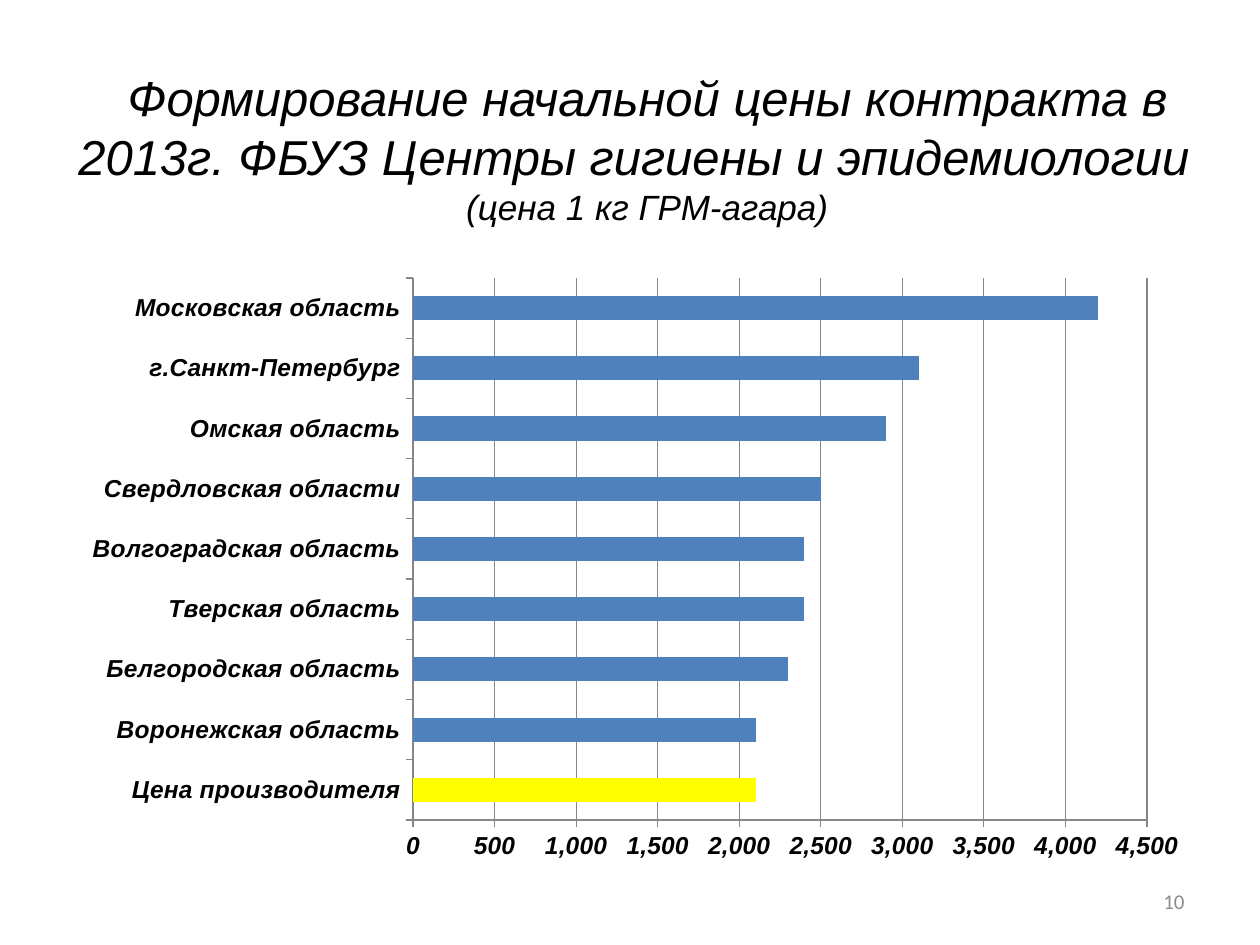
from dataclasses import dataclass

from pptx import Presentation
from pptx import util as u
from pptx.chart.data import CategoryChartData
from pptx.dml.color import RGBColor
from pptx.enum import chart as ch, text


@dataclass(frozen=True)
class Theme:
    heading: str = "Arial"
    body: str = "Calibri"
    ink: str = "000000"
    muted: str = "8C8C8C"
    grid: str = "868686"
    bar: str = "4F81BD"
    accent: str = "FFFF00"
    title: int = 28
    subtitle: int = 20
    label: int = 14
    number: int = 12
    chart: int = 10


THEME = Theme()
PRICES = [
    ("Цена производителя", 2100),
    (" Воронежская область", 2100),
    (" Белгородская область", 2300),
    ("Тверская область", 2400),
    (" Волгоградская область", 2400),
    (" Свердловская области", 2500),
    (" Омская область", 2900),
    (" г.Санкт-Петербург", 3100),
    ("Московская область", 4200),
]


def color(value):
    return RGBColor.from_string(value)


def set_font(font, size, name=THEME.heading, ink=THEME.ink, bold=False, italic=False):
    font.size = u.Pt(size)
    font.name = name
    font.color.rgb = color(ink)
    font.bold = bold
    font.italic = italic


def add_run(p, content, **style):
    r = p.add_run()
    r.text = content
    set_font(r.font, **style)


def add_text(s, box, content, align=text.PP_ALIGN.CENTER, **style):
    tf = s.shapes.add_textbox(*map(u.Cm, box)).text_frame
    tf.word_wrap = True
    tf.vertical_anchor = text.MSO_ANCHOR.MIDDLE
    p = tf.paragraphs[0]
    p.alignment = align
    add_run(p, content, **style)
    return p


def style_axis(axis):
    axis.major_tick_mark = ch.XL_TICK_MARK.OUTSIDE
    axis.minor_tick_mark = ch.XL_TICK_MARK.NONE
    axis.format.line.color.rgb = color(THEME.grid)
    set_font(axis.tick_labels.font, THEME.label, bold=True, italic=True)


def add_price_chart(s, box):
    data = CategoryChartData(number_format="#,##0")
    data.categories = [name for name, _ in PRICES]
    data.add_series("Series 1", [price for _, price in PRICES])
    chart = s.shapes.add_chart(
        ch.XL_CHART_TYPE.BAR_STACKED, *map(u.Cm, box), data
    ).chart
    chart.has_legend = False
    chart.has_title = False
    set_font(chart.font, THEME.chart, THEME.body)
    plot = chart.plots[0]
    plot.gap_width = 150
    plot.overlap = 100
    plot.vary_by_categories = False
    bars = plot.series[0]
    for target, fill in ((bars, THEME.bar), (bars.points[0], THEME.accent)):
        target.format.fill.solid()
        target.format.fill.fore_color.rgb = color(fill)
    for axis in (chart.category_axis, chart.value_axis):
        style_axis(axis)
    values = chart.value_axis
    values.minimum_scale, values.maximum_scale, values.major_unit = 0, 4500, 500
    values.has_major_gridlines = True
    values.major_gridlines.format.line.color.rgb = color(THEME.grid)
    values.tick_labels.number_format = "#,##0"
    values.tick_labels.number_format_is_linked = False


def main():
    prs = Presentation()
    prs.slide_width, prs.slide_height = u.Cm(25.4), u.Cm(19.05)
    s = prs.slides.add_slide(prs.slide_layouts[6])
    p = add_text(
        s, (1.2, 1.38, 23.7, 3.18),
        "Формирование начальной цены контракта в 2013г. "
        "ФБУЗ Центры гигиены и эпидемиологии  ",
        size=THEME.title, italic=True,
    )
    p.add_line_break()
    add_run(p, "(цена 1 кг ГРМ-агара)", size=THEME.subtitle, italic=True)
    add_price_chart(s, (1.27, 5.36, 22.94, 12.22))
    add_text(
        s, (18.2, 17.66, 5.93, 1.01), "10", text.PP_ALIGN.RIGHT,
        size=THEME.number, name=THEME.body, ink=THEME.muted,
    )
    prs.save("out.pptx")


if __name__ == "__main__":
    main()
